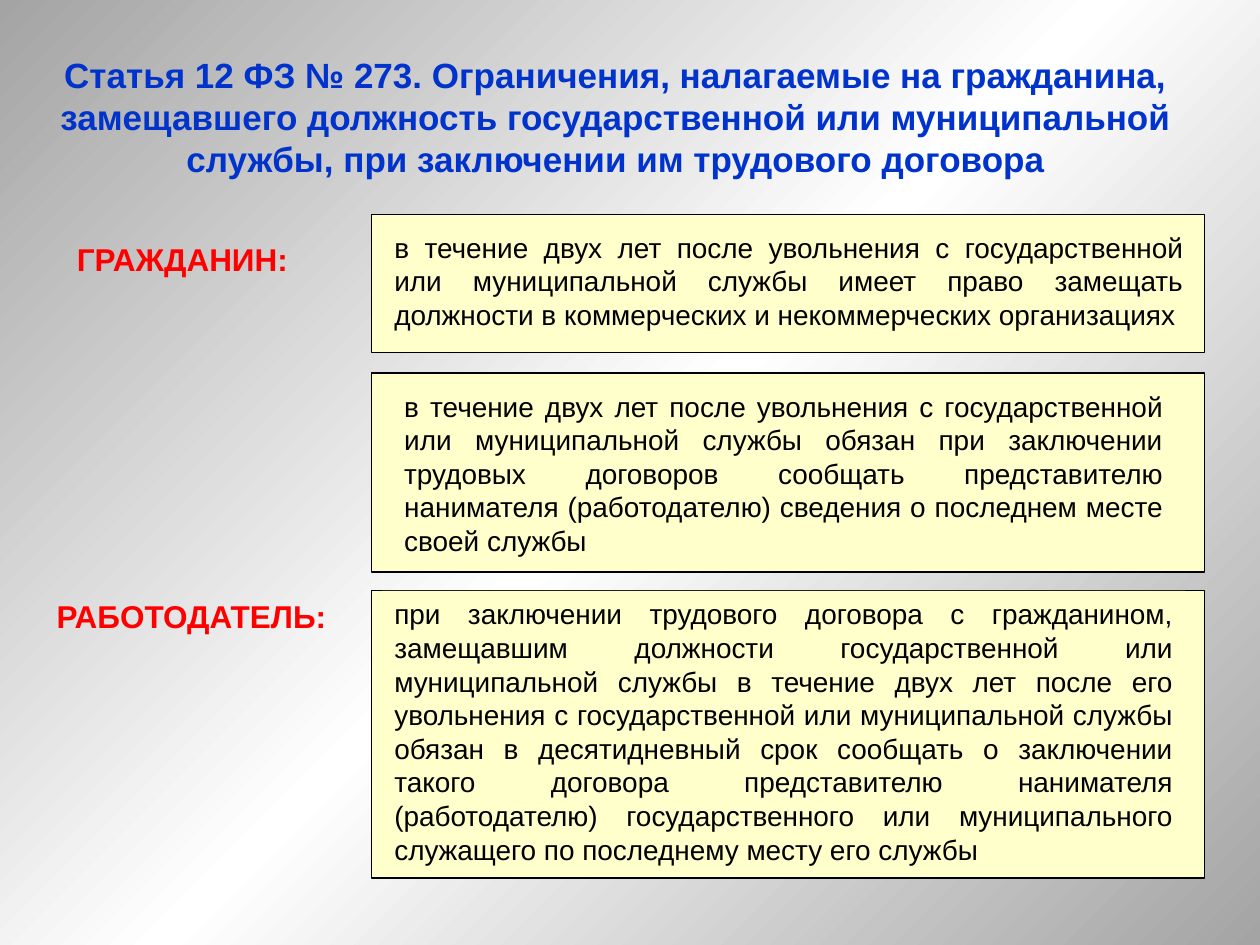
from copy import deepcopy
from dataclasses import dataclass

from pptx import Presentation
from pptx import util as u
from pptx.dml.color import RGBColor
from pptx.enum import shapes, text
from pptx.oxml.ns import qn


@dataclass(frozen=True)
class Theme:
    """Colours and type of the slide."""

    font: str = "Arial"
    title_size: int = 20
    label_size: int = 18
    body_size: int = 16
    title: str = "0033CC"
    label: str = "FF0000"
    body: str = "000000"
    panel: str = "FFFFCC"
    edge: str = "A4A4A4"
    middle: str = "FFFFFF"


class SlideBuilder:
    """Draws styled elements on the current slide."""

    def __init__(self, page, theme):
        self.page = page
        self.theme = theme

    def background(self):
        """Fill the slide with a diagonal three-stop gradient."""
        fill = self.page.background.fill
        fill.gradient()
        fill.gradient_angle = 315
        stops = self.page.element.find(".//" + qn("a:gsLst"))
        stops.insert(1, deepcopy(stops[0]))
        colors = (self.theme.edge, self.theme.middle, self.theme.edge)
        for stop, position, color in zip(fill.gradient_stops, (0, 0.5, 1), colors):
            stop.position = position
            stop.color.rgb = RGBColor.from_string(color)

    def place(self, shape, left, top, width, height):
        """Set position and size in centimetres."""
        shape.left, shape.top = u.Cm(left), u.Cm(top)
        shape.width, shape.height = u.Cm(width), u.Cm(height)

    def set_text(self, shape, words, size, color, bold, align):
        """Put one formatted paragraph into a shape."""
        frame = shape.text_frame
        frame.text = words
        frame.word_wrap = True
        para = frame.paragraphs[0]
        para.alignment = align
        para.font.name = self.theme.font
        para.font.size = u.Pt(size)
        para.font.bold = bold
        para.font.color.rgb = RGBColor.from_string(color)

    def title(self, words, *bounds):
        """Fill and move the title placeholder."""
        title = self.page.shapes.title
        self.place(title, *bounds)
        self.set_text(title, words, self.theme.title_size, self.theme.title,
                      True, text.PP_ALIGN.CENTER)
        title.text_frame.vertical_anchor = text.MSO_ANCHOR.MIDDLE
        title.text_frame.auto_size = text.MSO_AUTO_SIZE.NONE

    def panel(self, *bounds):
        """Add an outlined rectangle."""
        panel = self.page.shapes.add_shape(
            shapes.MSO_SHAPE.RECTANGLE, *map(u.Cm, bounds))
        panel.shadow.inherit = False
        panel.fill.solid()
        panel.fill.fore_color.rgb = RGBColor.from_string(self.theme.panel)
        panel.line.color.rgb = RGBColor.from_string(self.theme.body)
        panel.line.width = u.Pt(0.75)

    def text_box(self, words, bounds, size, color, bold, align):
        """Add a text box that grows with its text."""
        box = self.page.shapes.add_textbox(*map(u.Cm, bounds))
        self.set_text(box, words, size, color, bold, align)
        box.text_frame.auto_size = text.MSO_AUTO_SIZE.SHAPE_TO_FIT_TEXT
        return box

    def label(self, words, *bounds):
        """Add a bold label."""
        self.text_box(words, bounds, self.theme.label_size, self.theme.label,
                      True, text.PP_ALIGN.LEFT)

    def note(self, words, *bounds):
        """Add justified text on the panel colour."""
        box = self.text_box(words, bounds, self.theme.body_size, self.theme.body,
                            False, text.PP_ALIGN.JUSTIFY)
        box.fill.solid()
        box.fill.fore_color.rgb = RGBColor.from_string(self.theme.panel)


def main():
    """Build and save the slide."""
    deck = Presentation()
    deck.slide_width, deck.slide_height = u.Cm(25.4), u.Cm(19.05)
    builder = SlideBuilder(deck.slides.add_slide(deck.slide_layouts[5]), Theme())
    builder.background()
    builder.title(
        "Статья 12 ФЗ № 273. Ограничения, налагаемые на гражданина, "
        "замещавшего должность государственной или муниципальной службы, "
        "при заключении им трудового договора", 0.69, 0.76, 23.44, 3.18)

    for top, height in ((4.32, 2.79), (7.52, 4.01), (11.91, 5.79)):
        builder.panel(7.49, top, 16.79, height)

    builder.label("ГРАЖДАНИН:", 1.3, 4.72, 5, 1.02)
    builder.note(
        "в течение двух лет после увольнения с государственной или "
        "муниципальной службы имеет право замещать должности в коммерческих "
        "и некоммерческих организациях", 7.7, 4.52, 16.41, 2.29)
    builder.note(
        "в течение двух лет после увольнения с государственной или "
        "муниципальной службы обязан при заключении трудовых договоров "
        "сообщать представителю нанимателя (работодателю) сведения о "
        "последнем месте своей службы", 7.9, 7.72, 15.8, 3.66)

    builder.label("РАБОТОДАТЕЛЬ:", 0.89, 11.91, 6.4, 1.02)
    builder.note(
        "при заключении трудового договора с гражданином, замещавшим "
        "должности государственной или муниципальной службы в течение двух "
        "лет после его увольнения с государственной или муниципальной службы "
        "обязан в десятидневный срок сообщать о заключении такого договора "
        "представителю нанимателя (работодателю) государственного или "
        "муниципального служащего по последнему месту его службы",
        7.7, 11.91, 16.2, 5.69)
    deck.save("out.pptx")


if __name__ == "__main__":
    main()
